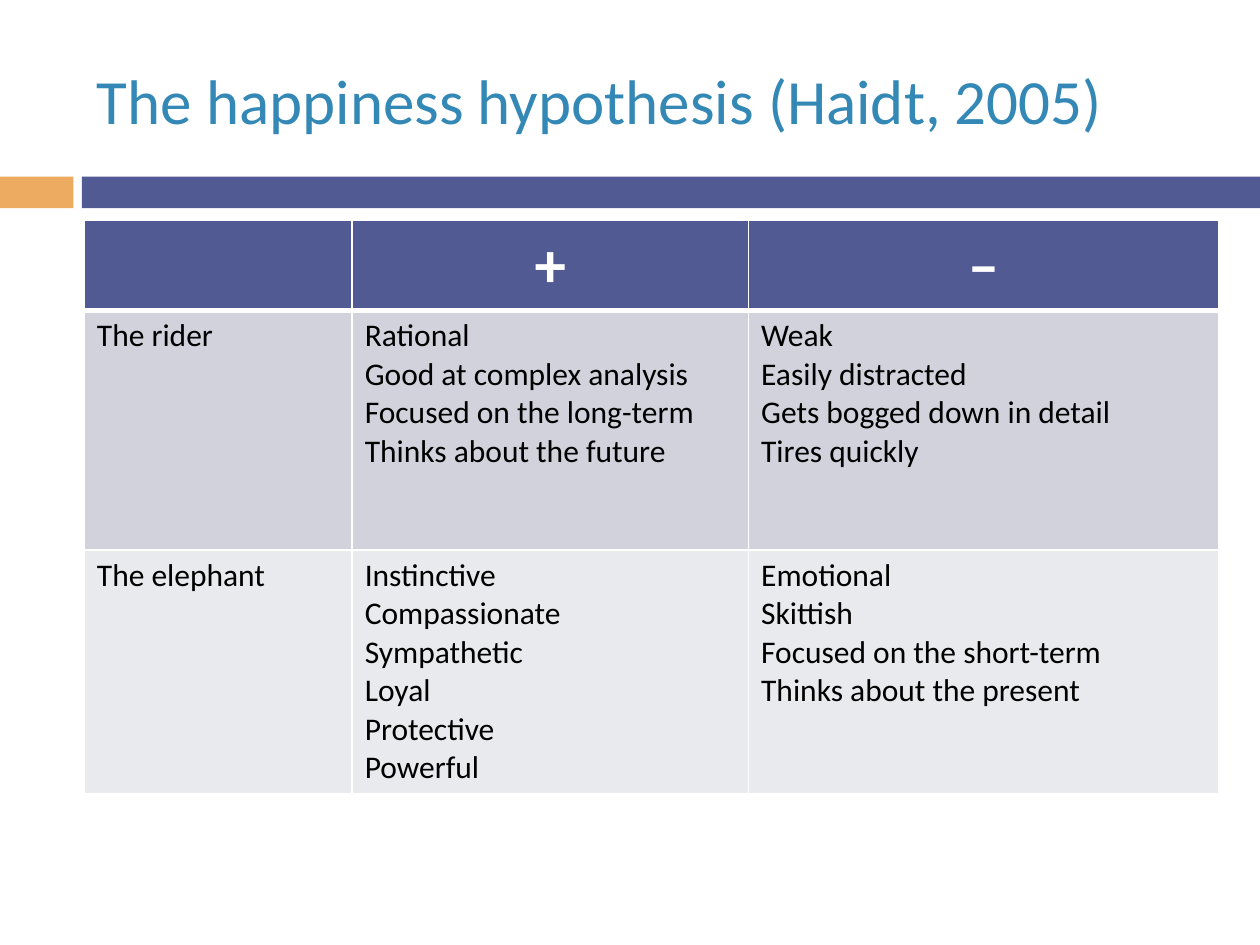
from lxml.etree import SubElement as Sub
from pptx import Presentation
from pptx.dml.color import RGBColor as RGB
from pptx.enum.shapes import MSO_SHAPE as Kind
from pptx.enum.text import MSO_ANCHOR as Anchor, PP_ALIGN as Align
from pptx.oxml.ns import qn
from pptx.util import Cm, Pt

NAVY = RGB(0x52, 0x5A, 0x93)
AMBER = RGB(0xED, 0xAA, 0x61)
TEAL = RGB(0x34, 0x88, 0xB6)
GREY = RGB(0xD1, 0xD2, 0xDC)
PALE = RGB(0xE9, 0xEA, 0xEE)
WHITE = RGB(0xFF, 0xFF, 0xFF)
BLACK = RGB(0, 0, 0)
FONT = "Calibri"


def style(para, size, color, bold, align):
    para.alignment = align
    font = para.font
    font.name, font.size, font.bold = FONT, Pt(size), bold
    font.color.rgb = color


def edge(cell, side, width):
    line = Sub(cell._tc.get_or_add_tcPr(), qn(f"a:ln{side}"), w=str(Pt(width)))
    Sub(Sub(line, qn("a:solidFill")), qn("a:srgbClr"), val=str(WHITE))


deck = Presentation()
deck.slide_width, deck.slide_height = Cm(25.4), Cm(19.05)
slide = deck.slides.add_slide(deck.slide_layouts[5])

for left, width, color in [(0, 1.48, AMBER), (1.65, 23.75, NAVY)]:
    bar = slide.shapes.add_shape(Kind.RECTANGLE, Cm(left), Cm(3.56), Cm(width), Cm(0.64))
    bar.shadow.inherit = False
    bar.fill.solid()
    bar.fill.fore_color.rgb = color
    bar.line.fill.background()

title = slide.shapes.title
title.left, title.top, title.width, title.height = Cm(1.7), Cm(0.64), Cm(22.66), Cm(2.74)
title.text_frame.text = "The happiness hypothesis (Haidt, 2005)"
title.text_frame.vertical_anchor = Anchor.MIDDLE
style(title.text_frame.paragraphs[0], 36, TEAL, False, Align.LEFT)

rows = [
    ["", "+", "–"],
    [
        "The rider",
        "Rational\nGood at complex analysis\nFocused on the long-term\nThinks about the future",
        "Weak\nEasily distracted\nGets bogged down in detail\nTires quickly",
    ],
    [
        "The elephant",
        "Instinctive\nCompassionate\nSympathetic\nLoyal\nProtective\nPowerful",
        "Emotional\nSkittish\nFocused on the short-term\nThinks about the present",
    ],
]
looks = [
    (NAVY, 36, WHITE, True, Align.CENTER),
    (GREY, 18, BLACK, False, Align.LEFT),
    (PALE, 18, BLACK, False, Align.LEFT),
]

table = slide.shapes.add_table(3, 3, Cm(1.7), Cm(4.45), Cm(22.86), Cm(11.43)).table
for col, width in zip(table.columns, [5.4, 7.99, 9.47]):
    col.width = Cm(width)
for row, height in zip(table.rows, [1.77, 4.83, 4.83]):
    row.height = Cm(height)

for r, (texts, look) in enumerate(zip(rows, looks)):
    fill, *text_look = look
    for c, text in enumerate(texts):
        cell = table.cell(r, c)
        cell.text = text
        for para in cell.text_frame.paragraphs:
            style(para, *text_look)
        for side, width in zip("LRTB", [1, 1, 3 if r == 1 else 1, 3 if r == 0 else 1]):
            edge(cell, side, width)
        cell.fill.solid()
        cell.fill.fore_color.rgb = fill

deck.save("out.pptx")
